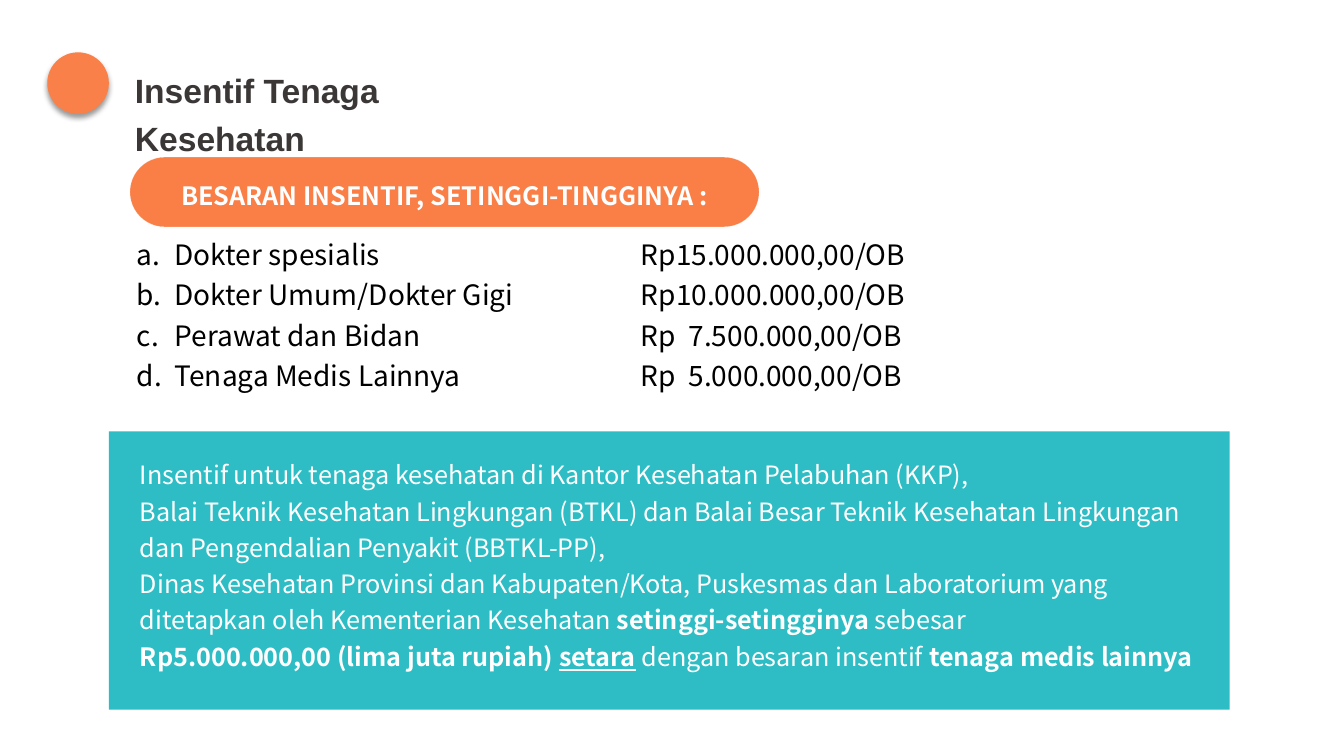
from lxml.etree import SubElement
from pptx import Presentation
from pptx.dml.color import RGBColor
from pptx.enum.shapes import MSO_SHAPE
from pptx.enum.text import MSO_ANCHOR, PP_ALIGN
from pptx.oxml import parse_xml
from pptx.oxml.ns import nsdecls, qn
from pptx.util import Pt

# Content
TITLE = "Insentif Tenaga Kesehatan"
HEADING = "BESARAN INSENTIF, SETINGGI-TINGGINYA :"
INCENTIVES = [
    ("Dokter spesialis", "Rp15.000.000,00/OB"),
    ("Dokter Umum/Dokter Gigi", "Rp10.000.000,00/OB"),
    ("Perawat dan Bidan", "Rp  7.500.000,00/OB"),
    ("Tenaga Medis Lainnya", "Rp  5.000.000,00/OB"),
]
# Each paragraph is a list of (text, style): "" plain, "b" bold, "u" underlined
NOTE = [
    [("Insentif untuk tenaga kesehatan di Kantor Kesehatan Pelabuhan (KKP),", "")],
    [("Balai Teknik Kesehatan Lingkungan (BTKL) dan Balai Besar Teknik Kesehatan "
      "Lingkungan dan Pengendalian Penyakit (BBTKL-PP),", "")],
    [("Dinas Kesehatan Provinsi dan Kabupaten/Kota, Puskesmas dan Laboratorium yang "
      "ditetapkan oleh Kementerian Kesehatan ", ""),
     ("setinggi-setingginya ", "b"), ("sebesar", "")],
    [("Rp5.000.000,00 (lima juta rupiah) ", "b"), ("setara", "bu"), (" ", "b"),
     ("dengan besaran insentif ", ""), ("tenaga medis lainnya", "b")],
]

SANS = "Noto Sans CJK SC"
WHITE = "FFFFFF"
INDENT = 27
AMOUNT_TAB = 360


def color(hex_value):
    return RGBColor.from_string(hex_value)


def add_shape(kind, left, top, width, height, fill):
    shape = page.shapes.add_shape(kind, Pt(left), Pt(top), Pt(width), Pt(height))
    shape.shadow.inherit = False
    shape.fill.solid()
    shape.fill.fore_color.rgb = color(fill)
    shape.line.fill.background()
    return shape


def add_box(left, top, width, height):
    box = page.shapes.add_textbox(Pt(left), Pt(top), Pt(width), Pt(height))
    box.text_frame.word_wrap = True
    return box


def write(shape, paragraphs, size, ink, font=SANS, align=PP_ALIGN.LEFT):
    frame = shape.text_frame
    for index, spans in enumerate(paragraphs):
        para = frame.add_paragraph() if index else frame.paragraphs[0]
        para.alignment = align
        para.line_spacing = 1.2
        for text, style in spans:
            span = para.add_run()
            span.text = text
            span.font.name = font
            span.font.size = Pt(size)
            span.font.bold = "b" in style
            span.font.underline = "u" in style
            span.font.color.rgb = color(ink)
            SubElement(span.font._element, qn("a:ea"), typeface=font)


deck = Presentation()
deck.slide_width, deck.slide_height = Pt(960), Pt(540)
page = deck.slides.add_slide(deck.slide_layouts[6])

# Title and round marker
write(add_box(89.3, 40.3, 297.4, 35.3), [[(TITLE, "b")]], 24, "3B3737", font="Arial")
marker = add_shape(MSO_SHAPE.OVAL, 33.8, 37.4, 44, 44, "F98048")
marker.shadow.inherit = True
marker._element.spPr.append(parse_xml(
    f'<a:effectLst {nsdecls("a")}><a:outerShdw blurRad="50800" dist="38100" '
    'dir="5400000" rotWithShape="0"><a:srgbClr val="000000"><a:alpha val="40000"/>'
    '</a:srgbClr></a:outerShdw></a:effectLst>'))

# Heading pill
pill = add_shape(MSO_SHAPE.ROUNDED_RECTANGLE, 92.9, 112.3, 449.3, 49.7, "F97F47")
pill.adjustments[0] = 0.5
pill.line.color.rgb = color(WHITE)
pill.line.width = Pt(0.25)
SubElement(pill.line._ln.find(".//" + qn("a:srgbClr")), qn("a:alpha"), val="30000")
pill.text_frame.vertical_anchor = MSO_ANCHOR.MIDDLE
write(pill, [[(HEADING, "b")]], 18, WHITE, align=PP_ALIGN.CENTER)

# Lettered list with the amounts at a tab stop
incentive_box = add_box(90.7, 161.3, 676.8, 123.8)
write(incentive_box, [[(f"{role}\t{amount}", "")] for role, amount in INCENTIVES],
      20, "000000")
for para in incentive_box.text_frame.paragraphs:
    layout = para._p.get_or_add_pPr()
    layout.set("marL", str(Pt(INDENT)))
    layout.set("indent", str(-Pt(INDENT)))
    SubElement(layout, qn("a:buFont"), typeface="+mj-lt")
    SubElement(layout, qn("a:buAutoNum"), type="alphaLcPeriod")
    stops = SubElement(layout, qn("a:tabLst"))
    SubElement(stops, qn("a:tab"), pos=str(Pt(AMOUNT_TAB)), algn="l")

# Note on its panel
add_shape(MSO_SHAPE.RECTANGLE, 77.8, 308.2, 800.6, 198.7, "2EBDC4")
write(add_box(92.9, 320.4, 779.8, 157), NOTE, 18, WHITE)

deck.save("out.pptx")
